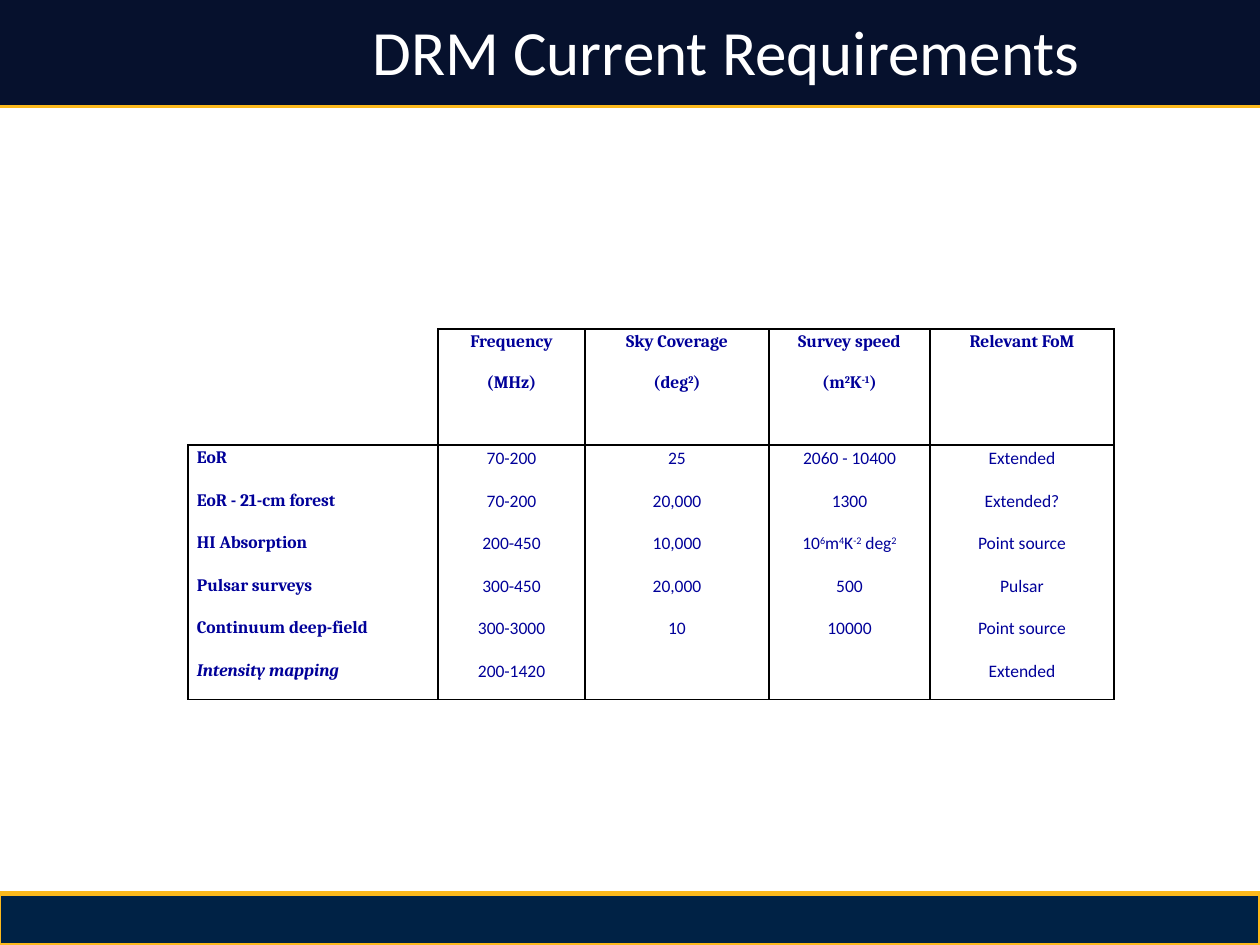
from dataclasses import dataclass

from lxml.etree import SubElement
from pptx import Presentation
from pptx.dml.color import RGBColor
from pptx.enum.shapes import MSO_CONNECTOR, MSO_SHAPE
from pptx.enum.text import MSO_ANCHOR, PP_ALIGN
from pptx.oxml import parse_xml
from pptx.oxml.ns import nsdecls, qn
from pptx.util import Emu, Pt

PX = 914400 / 126
WIDTH, HEIGHT = 1260, 945

NAVY = RGBColor(0x06, 0x11, 0x2D)
FOOTER_BLUE = RGBColor(0x00, 0x22, 0x45)
GOLD = RGBColor(0xFC, 0xB9, 0x1C)
WHITE = RGBColor(0xFF, 0xFF, 0xFF)
TEXT_BLUE = RGBColor(0x00, 0x00, 0x99)
BLACK = RGBColor(0x00, 0x00, 0x00)


@dataclass(frozen=True)
class TextStyle:
    font: str
    size: int
    color: RGBColor
    bold: bool = False
    italic: bool = False
    align: PP_ALIGN = PP_ALIGN.LEFT


TITLE = TextStyle("Calibri", 36, WHITE)
HEADING = TextStyle("Cambria", 10, TEXT_BLUE, bold=True, align=PP_ALIGN.CENTER)
LABEL = TextStyle("Cambria", 10, TEXT_BLUE, bold=True)
ITALIC_LABEL = TextStyle("Cambria", 10, TEXT_BLUE, bold=True, italic=True)
VALUE = TextStyle("Calibri", 10, TEXT_BLUE, align=PP_ALIGN.CENTER)

# Text between carets is superscript; a line break starts a new paragraph
ROWS = [
    ("", "Frequency\n(MHz)", "Sky Coverage\n(deg^2^)", "Survey speed\n(m^2^K^-1^)", "Relevant FoM"),
    ("EoR", "70-200", "25", "2060 - 10400", "Extended"),
    ("EoR - 21-cm forest", "70-200", "20,000", "1300", "Extended?"),
    ("HI Absorption", "200-450", "10,000", "10^6^m^4^K^-2^ deg^2^", "Point source"),
    ("Pulsar surveys", "300-450", "20,000", "500", "Pulsar"),
    ("Continuum deep-field", "300-3000", "10", "10000", "Point source"),
    ("Intensity mapping", "200-1420", "", "", "Extended"),
]
COLUMN_WIDTHS = (250, 147, 184, 161, 184)
ROW_HEIGHTS = (116,) + (43, 42) * 3
LAST_ROW = len(ROWS) - 1


def px(value: int) -> Emu:
    return Emu(round(value * PX))


def add_band(slide, top: int, height: int, color: RGBColor, outlined: bool) -> None:
    shape = slide.shapes.add_shape(MSO_SHAPE.RECTANGLE, 0, px(top), px(WIDTH), px(height))
    shape.shadow.inherit = False
    shape.fill.solid()
    shape.fill.fore_color.rgb = color
    if outlined:
        shape.line.color.rgb = GOLD
        shape.line.width = Pt(1.75)
    else:
        shape.line.fill.background()


def add_rule(slide, y: int) -> None:
    rule = slide.shapes.add_connector(MSO_CONNECTOR.STRAIGHT, 0, px(y), px(WIDTH), px(y))
    rule.line.color.rgb = GOLD
    rule.line.width = Pt(1.75)
    SubElement(rule.element.spPr, qn("a:effectLst"))


def write_paragraph(paragraph, text: str, style: TextStyle) -> None:
    paragraph.alignment = style.align
    for index, part in enumerate(text.split("^")):
        if not part:
            continue
        run = paragraph.add_run()
        run.text = part
        run.font.name = style.font
        run.font.size = Pt(style.size)
        run.font.color.rgb = style.color
        run.font.bold = style.bold
        run.font.italic = style.italic
        if index % 2:
            run._r.get_or_add_rPr().set("baseline", "30000")


def cell_style(row: int, column: int) -> TextStyle:
    if row == 0:
        return HEADING
    if column > 0:
        return VALUE
    return ITALIC_LABEL if row == LAST_ROW else LABEL


def bordered_sides(row: int, column: int) -> str:
    if row == 0:
        return "RB" if column == 0 else "LRTB"
    return "LR" + ("T" if row == 1 else "") + ("B" if row == LAST_ROW else "")


def set_borders(cell, sides: str) -> None:
    properties = cell._tc.get_or_add_tcPr()
    for index, side in enumerate("LRTB"):
        fill = (f'<a:solidFill><a:srgbClr val="{BLACK}"/></a:solidFill>'
                if side in sides else "<a:noFill/>")
        border = parse_xml(f'<a:ln{side} {nsdecls("a")} w="{Pt(1)}">{fill}</a:ln{side}>')
        properties.insert(index, border)


def fill_cell(cell, text: str, style: TextStyle, sides: str) -> None:
    cell.margin_left = cell.margin_right = px(9)
    cell.margin_top = cell.margin_bottom = 0
    cell.fill.background()
    set_borders(cell, sides)
    for index, line in enumerate(text.split("\n") if text else []):
        frame = cell.text_frame
        paragraph = frame.add_paragraph() if index else frame.paragraphs[0]
        paragraph.line_spacing = 1.15
        paragraph.space_after = Pt(10)
        write_paragraph(paragraph, line, style)


def add_requirements_table(slide, left: int, top: int) -> None:
    table = slide.shapes.add_table(
        len(ROWS), len(COLUMN_WIDTHS), px(left), px(top),
        px(sum(COLUMN_WIDTHS)), px(sum(ROW_HEIGHTS))).table
    table.first_row = table.horz_banding = False
    for column, width in zip(table.columns, COLUMN_WIDTHS):
        column.width = px(width)
    for row, height in zip(table.rows, ROW_HEIGHTS):
        row.height = px(height)
    for r, texts in enumerate(ROWS):
        for c, text in enumerate(texts):
            fill_cell(table.cell(r, c), text, cell_style(r, c), bordered_sides(r, c))


def add_title(slide, text: str) -> None:
    frame = slide.shapes.add_textbox(px(360), 0, px(825), px(100)).text_frame
    frame.word_wrap = True
    frame.vertical_anchor = MSO_ANCHOR.MIDDLE
    write_paragraph(frame.paragraphs[0], text, TITLE)


def main() -> None:
    presentation = Presentation()
    presentation.slide_width, presentation.slide_height = px(WIDTH), px(HEIGHT)
    slide = presentation.slides.add_slide(presentation.slide_layouts[6])

    # Header and footer bands with gold rules
    add_rule(slide, 893)
    add_band(slide, 0, 107, NAVY, outlined=False)
    add_rule(slide, 107)
    add_band(slide, 895, 50, FOOTER_BLUE, outlined=True)

    # Content
    add_title(slide, "DRM Current Requirements")
    add_requirements_table(slide, 188, 329)

    presentation.save("out.pptx")


if __name__ == "__main__":
    main()
